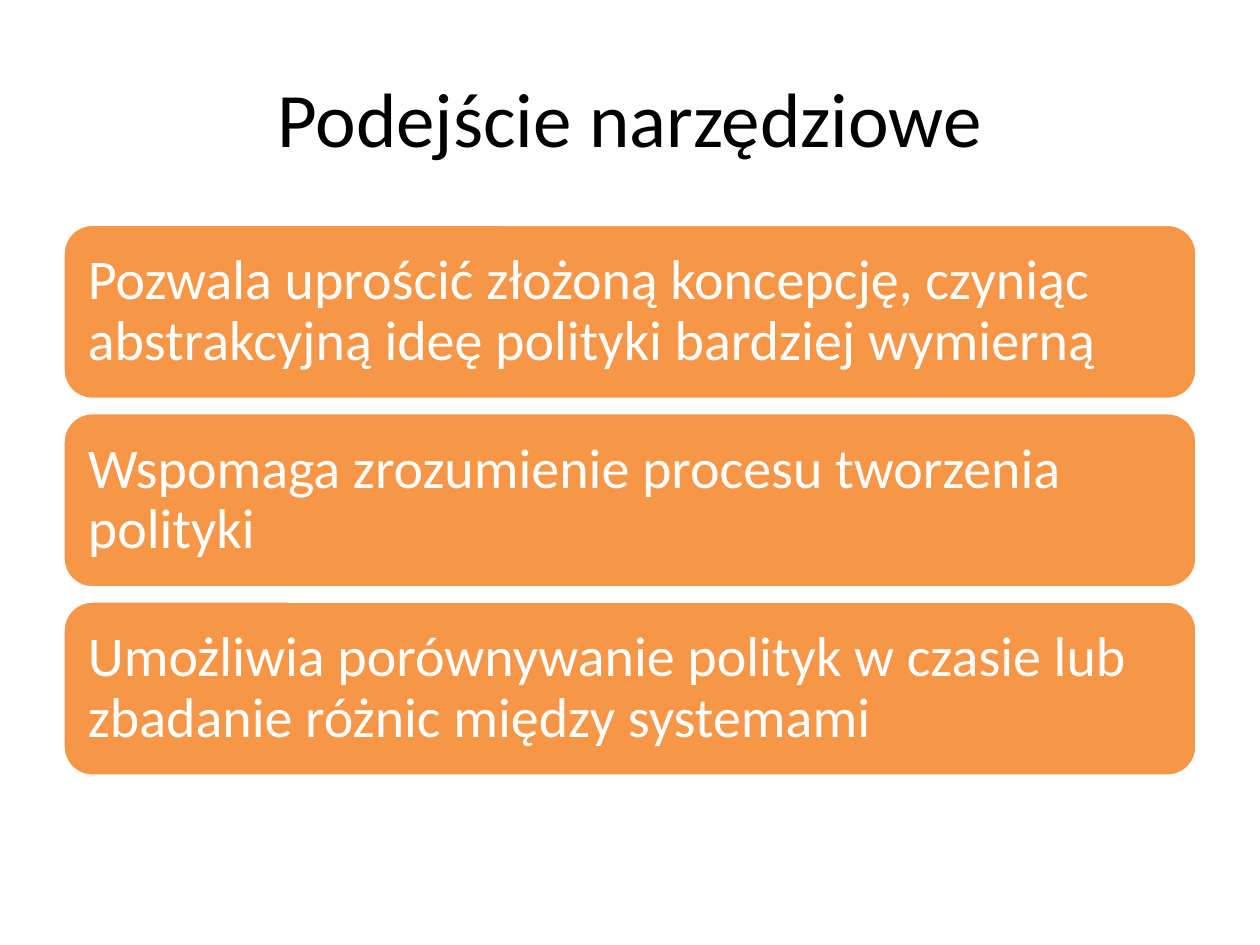
from dataclasses import dataclass

from pptx import Presentation
from pptx.dml.color import RGBColor
from pptx.enum.shapes import MSO_SHAPE
from pptx.enum.text import MSO_ANCHOR, PP_ALIGN
from pptx.util import Inches, Pt

ROUNDED = MSO_SHAPE.ROUNDED_RECTANGLE
MIDDLE = MSO_ANCHOR.MIDDLE
LEFT, CENTER = PP_ALIGN.LEFT, PP_ALIGN.CENTER
TITLE_ONLY = 5


@dataclass(frozen=True)
class Theme:
    """Colours, font and type sizes of the slide."""
    font: str = "Calibri"
    title_size: int = 44
    card_size: int = 32
    title: RGBColor = RGBColor(0x00, 0x00, 0x00)
    card: RGBColor = RGBColor(0xF7, 0x96, 0x46)
    light: RGBColor = RGBColor(0xFF, 0xFF, 0xFF)


THEME = Theme()
MARGIN, WIDTH = 0.5, 9
CARD_TOP, CARD_HEIGHT, CARD_STEP = 1.78, 1.39, 1.495
CARD_INSET = 0.13
ADVANTAGES = [
    "Pozwala uprościć złożoną koncepcję, czyniąc abstrakcyjną ideę polityki bardziej wymierną",
    "Wspomaga zrozumienie procesu tworzenia polityki",
    "Umożliwia porównywanie polityk w czasie lub zbadanie różnic między systemami",
]


def write_text(tf, text, size, color, align):
    """Fill a text frame with one formatted, vertically centred paragraph."""
    tf.word_wrap = True
    tf.vertical_anchor = MIDDLE
    p = tf.paragraphs[0]
    p.text = text
    p.alignment = align
    p.font.name = THEME.font
    p.font.size = Pt(size)
    p.font.color.rgb = color
    return p


def set_title(s, text):
    """Place and format the slide title."""
    sp = s.shapes.title
    sp.left, sp.top = Inches(MARGIN), Inches(0.3)
    sp.width, sp.height = Inches(WIDTH), Inches(1.25)
    write_text(sp.text_frame, text, THEME.title_size, THEME.title, CENTER)


def add_card(s, top, text):
    """Add a full-width rounded card with its statement."""
    sp = s.shapes.add_shape(ROUNDED, Inches(MARGIN), Inches(top),
                            Inches(WIDTH), Inches(CARD_HEIGHT))
    sp.shadow.inherit = False
    sp.fill.solid()
    sp.fill.fore_color.rgb = THEME.card
    sp.line.color.rgb = THEME.light
    sp.line.width = Pt(2)
    tf = sp.text_frame
    tf.margin_left = tf.margin_right = Inches(CARD_INSET)
    tf.margin_top = tf.margin_bottom = Inches(CARD_INSET)
    p = write_text(tf, text, THEME.card_size, THEME.light, LEFT)
    p.line_spacing = 0.9


def main():
    """Build and save the slide."""
    prs = Presentation()
    prs.slide_width, prs.slide_height = Inches(10), Inches(7.5)
    s = prs.slides.add_slide(prs.slide_layouts[TITLE_ONLY])
    set_title(s, "Podejście narzędziowe")
    for i, text in enumerate(ADVANTAGES):
        add_card(s, CARD_TOP + i * CARD_STEP, text)
    prs.save("out.pptx")


if __name__ == "__main__":
    main()
